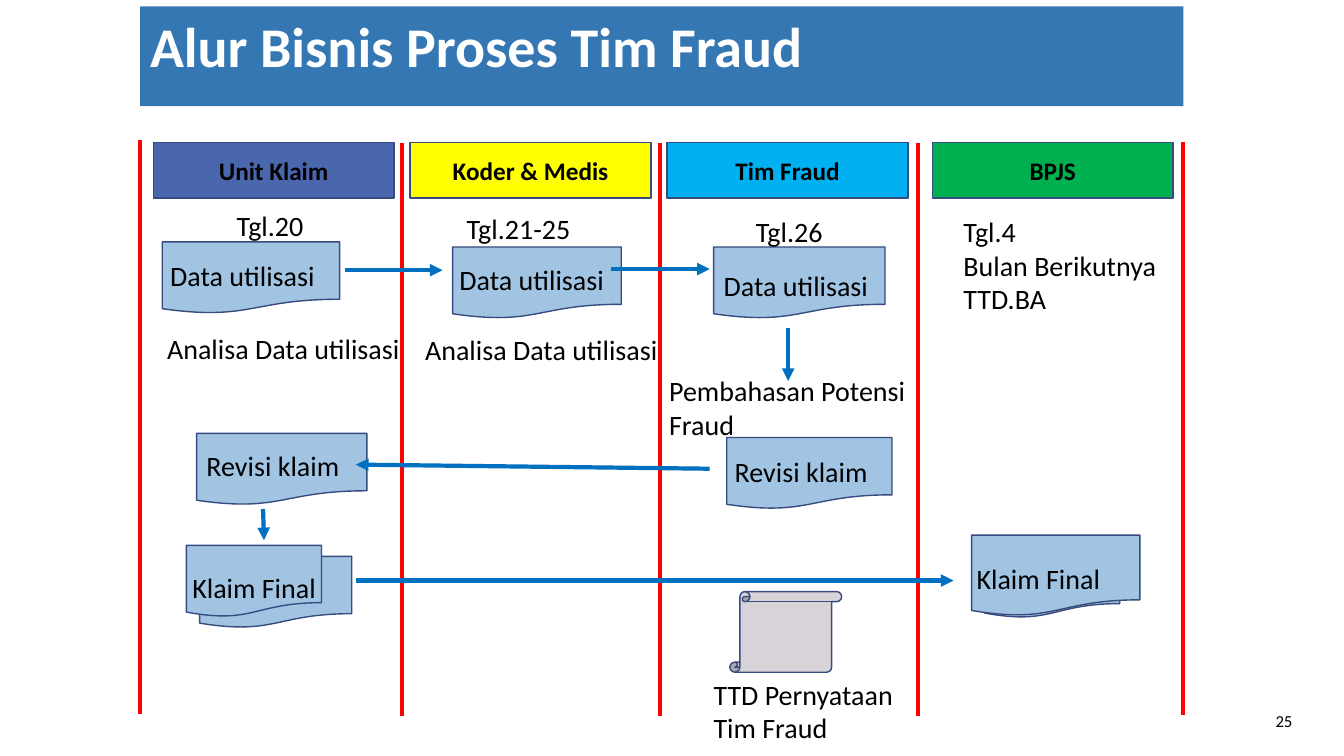
from dataclasses import dataclass

from pptx import Presentation
from pptx.dml.color import RGBColor
from pptx.enum.shapes import MSO_CONNECTOR, MSO_SHAPE as Shape
from pptx.enum.text import MSO_ANCHOR as Anchor, MSO_AUTO_SIZE as Fit, PP_ALIGN as Align
from pptx.oxml import parse_xml
from pptx.oxml.ns import nsdecls
from pptx.util import Pt

FONT = "Calibri"
BLACK = RGBColor(0x00, 0x00, 0x00)
WHITE = RGBColor(0xFF, 0xFF, 0xFF)
TITLE_BLUE = RGBColor(0x34, 0x77, 0xB2)
INDIGO = RGBColor(0x4A, 0x66, 0xAC)
YELLOW = RGBColor(0xFF, 0xFF, 0x00)
SKY = RGBColor(0x00, 0xB0, 0xF0)
GREEN = RGBColor(0x00, 0xB0, 0x50)
RED = RGBColor(0xFF, 0x00, 0x00)
ARROW = RGBColor(0x00, 0x70, 0xC0)
EDGE = RGBColor(0x37, 0x4B, 0x7F)
PAPER = RGBColor(0xA1, 0xC4, 0xE3)
SCROLL = RGBColor(0xD8, 0xD3, 0xD9)


@dataclass
class Lane:
    name: str
    left: float
    fill: RGBColor


@dataclass
class Doc:
    left: float
    top: float
    width: float
    height: float = 51.1


@dataclass
class Label:
    text: str
    left: float
    top: float
    width: float
    wrap: bool = False


@dataclass
class Line:
    x1: float
    y1: float
    x2: float
    y2: float


LANES = [
    Lane("Unit Klaim", 109.5, INDIGO),
    Lane("Koder & Medis", 293, YELLOW),
    Lane("Tim Fraud", 476.6, SKY),
    Lane("BPJS", 666, GREEN),
]
BORDERS = [
    Line(100.1, 100.1, 100.1, 509.8),
    *[Line(x, 102.2, x, 511.2) for x in (287.3, 471.6, 655.9)],
    Line(845.3, 101.5, 845.3, 510.5),
]
DOCS = [
    Doc(115.9, 172.8, 126.7),
    Doc(323.3, 176.4, 120.5),
    Doc(509.8, 176.4, 122.4),
    Doc(519.1, 312.5, 118.1),
    Doc(140.4, 309.6, 121.7),
    Doc(142.6, 397.4, 108.7),
    Doc(133.2, 389.5, 96.5),
    Doc(703.4, 390.2, 96.5),
    Doc(694.1, 382.3, 120.2, 57.6),
]
LABELS = [
    Label("Tgl.20", 162, 145.4, 62.6),
    Label("Tgl.21-25", 326.2, 147.6, 110.2, wrap=True),
    Label("Tgl.26", 532.8, 149.8, 62.6),
    Label("Tgl.4\nBulan Berikutnya\nTTD.BA", 681.1, 149.8, 153.4),
    Label("Data utilisasi", 114.5, 181.4, 118.8),
    Label("Data utilisasi", 321.1, 183.6, 118.8),
    Label("Data utilisasi", 509.8, 187.9, 118.8),
    Label("Analisa Data utilisasi", 112.3, 233.3, 182.9),
    Label("Analisa Data utilisasi", 296.6, 234, 182.9),
    Label("Pembahasan Potensi\nFraud", 470.9, 263.5, 189.4),
    Label("Revisi klaim", 140.4, 316.8, 110.2),
    Label("Revisi klaim", 517.7, 321.1, 110.2),
    Label("Klaim Final", 130.3, 403.9, 103.7),
    Label("Klaim Final", 690.5, 397.4, 144, wrap=True),
    Label("TTD Pernyataan\nTim Fraud", 502.6, 480.2, 148.3),
]
ARROWS = [
    Line(246.2, 193, 316.1, 193),
    Line(436.3, 192.2, 506.9, 192.2),
    Line(563, 234, 563, 272.2),
    Line(506.9, 334.8, 254.2, 331.9),
    Line(187.9, 363.6, 188.6, 385.9),
    Line(254.2, 414.7, 681.1, 414.7),
]


def write(shape, text: str, size: float, color: RGBColor = BLACK,
          bold: bool = False, align=Align.LEFT, anchor=Anchor.TOP) -> None:
    frame = shape.text_frame
    frame.text = text
    frame.vertical_anchor = anchor
    for par in frame.paragraphs:
        par.alignment = align
        font = par.font
        font.name, font.size, font.bold = FONT, Pt(size), bold
        font.color.rgb = color


def add_box(slide, kind, left: float, top: float, width: float, height: float,
            fill: RGBColor, edge: RGBColor | None = EDGE):
    box = slide.shapes.add_shape(kind, Pt(left), Pt(top), Pt(width), Pt(height))
    box.shadow.inherit = False
    box.fill.solid()
    box.fill.fore_color.rgb = fill
    if edge is None:
        box.line.fill.background()
    else:
        box.line.color.rgb = edge
        box.line.width = Pt(1)
    return box


def add_label(slide, label: Label) -> None:
    height = 7.5 + 24 * (label.text.count("\n") + 1)
    box = slide.shapes.add_textbox(Pt(label.left), Pt(label.top), Pt(label.width), Pt(height))
    box.text_frame.word_wrap = label.wrap
    box.text_frame.auto_size = Fit.SHAPE_TO_FIT_TEXT
    write(box, label.text, 20)


def add_line(slide, line: Line, color: RGBColor, head: bool = False) -> None:
    link = slide.shapes.add_connector(
        MSO_CONNECTOR.STRAIGHT, Pt(line.x1), Pt(line.y1), Pt(line.x2), Pt(line.y2))
    link.line.color.rgb = color
    link.line.width = Pt(3)
    if head:
        link.line._get_or_add_ln().append(
            parse_xml(f'<a:tailEnd {nsdecls("a")} type="triangle"/>'))
    link._element.spPr.append(parse_xml(f'<a:effectLst {nsdecls("a")}/>'))


def main() -> None:
    deck = Presentation()
    deck.slide_width, deck.slide_height = Pt(960), Pt(540)
    slide = deck.slides.add_slide(deck.slide_layouts[6])

    title = add_box(slide, Shape.RECTANGLE, 100.1, 4.5, 745.2, 71.3, TITLE_BLUE, None)
    write(title, "Alur Bisnis Proses Tim Fraud", 40, WHITE, True)
    for lane in LANES:
        head = add_box(slide, Shape.RECTANGLE, lane.left, 101.8, 172, 39.6, lane.fill)
        write(head, lane.name, 18, bold=True, align=Align.CENTER, anchor=Anchor.MIDDLE)
    for line in BORDERS:
        add_line(slide, line, RED)
    for doc in DOCS:
        add_box(slide, Shape.FLOWCHART_DOCUMENT,
                doc.left, doc.top, doc.width, doc.height, PAPER)
    add_box(slide, Shape.VERTICAL_SCROLL, 521.3, 422.6, 79.9, 57.6, SCROLL)
    for label in LABELS:
        add_label(slide, label)
    for line in ARROWS:
        add_line(slide, line, ARROW, head=True)

    number = slide.shapes.add_textbox(Pt(868.3), Pt(500.4), Pt(62), Pt(28.8))
    number.text_frame.word_wrap = True
    write(number, "25", 12, align=Align.RIGHT, anchor=Anchor.MIDDLE)
    deck.save("out.pptx")


if __name__ == "__main__":
    main()
